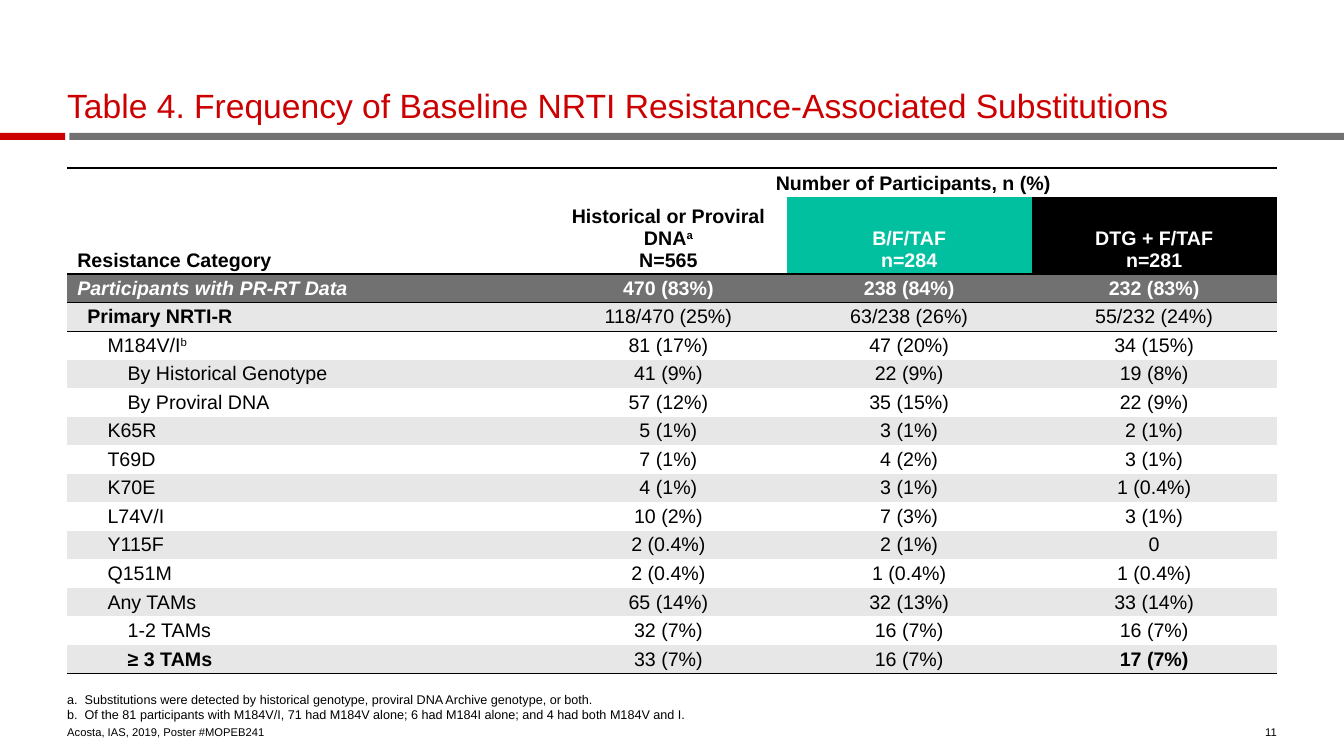
from lxml import etree
from pptx import Presentation
from pptx.dml.color import RGBColor
from pptx.enum.shapes import MSO_SHAPE
from pptx.enum.text import MSO_ANCHOR, PP_ALIGN
from pptx.oxml.ns import qn
from pptx.util import Pt

RECTANGLE = MSO_SHAPE.RECTANGLE
BOTTOM, MIDDLE = MSO_ANCHOR.BOTTOM, MSO_ANCHOR.MIDDLE
LEFT, CENTER, RIGHT = PP_ALIGN.LEFT, PP_ALIGN.CENTER, PP_ALIGN.RIGHT

FONT = "Arial"
RED, GRAY, PALE, TEAL = "CC0000", "717171", "E7E7E7", "00C0A0"
BLACK, WHITE = "000000", "FFFFFF"

MARGIN, CONTENT_WIDTH = 48, 864
COLUMN_WIDTHS = (345, 169, 175, 175)
ROW_HEIGHT, GROUP_ROW_HEIGHT = 20.4, 55.4
RULED_EDGES = {0, 2, 3, 4, 16}  # row boundaries that carry a black rule

# "^" starts a superscript
GROUPS = (
    ("Historical or Proviral DNA^a\nN=565", WHITE, BLACK, 7.2),
    ("B/F/TAF\nn=284", TEAL, WHITE, 10.8),
    ("DTG + F/TAF\nn=281", BLACK, WHITE, 10.8),
)
# Left inset, category, counts
RESISTANCE_ROWS = (
    (7.2, "Participants with PR-RT Data", "470 (83%)", "238 (84%)", "232 (83%)"),
    (14.4, "Primary NRTI-R", "118/470 (25%)", "63/238 (26%)", "55/232 (24%)"),
    (28.8, "M184V/I^b", "81 (17%)", "47 (20%)", "34 (15%)"),
    (43.2, "By Historical Genotype", "41 (9%)", "22 (9%)", "19 (8%)"),
    (43.2, "By Proviral DNA", "57 (12%)", "35 (15%)", "22 (9%)"),
    (28.8, "K65R", "5 (1%)", "3 (1%)", "2 (1%)"),
    (28.8, "T69D", "7 (1%)", "4 (2%)", "3 (1%)"),
    (28.8, "K70E", "4 (1%)", "3 (1%)", "1 (0.4%)"),
    (28.8, "L74V/I", "10 (2%)", "7 (3%)", "3 (1%)"),
    (28.8, "Y115F", "2 (0.4%)", "2 (1%)", "0"),
    (28.8, "Q151M", "2 (0.4%)", "1 (0.4%)", "1 (0.4%)"),
    (28.8, "Any TAMs", "65 (14%)", "32 (13%)", "33 (14%)"),
    (43.2, "1-2 TAMs", "32 (7%)", "16 (7%)", "16 (7%)"),
    (43.2, "≥ 3 TAMs", "33 (7%)", "16 (7%)", "17 (7%)"),
)
BOLD_LABELS = {"Participants with PR-RT Data", "Primary NRTI-R", "≥ 3 TAMs"}
FOOTNOTES = (
    "a.\tSubstitutions were detected by historical genotype, proviral DNA Archive genotype, or both.\n"
    "b.\tOf the 81 participants with M184V/I, 71 had M184V alone; "
    "6 had M184I alone; and 4 had both M184V and I."
)


def rgb(hex_color):
    return RGBColor.from_string(hex_color)


def write(frame, text, size, color=BLACK, align=LEFT, bold=False, italic=False):
    """Fill a text frame, one paragraph a line."""
    for index, line in enumerate(text.split("\n")):
        paragraph = frame.paragraphs[0] if index == 0 else frame.add_paragraph()
        paragraph.alignment = align
        font = paragraph.font
        font.name, font.size, font.bold, font.italic = FONT, Pt(size), bold, italic
        font.color.rgb = rgb(color)
        body, _, superscript = line.partition("^")
        paragraph.add_run().text = body
        if superscript:
            raised = paragraph.add_run()
            raised.text = superscript
            raised.font._element.set("baseline", "30000")


def clear_insets(frame):
    frame.margin_left = frame.margin_right = frame.margin_top = frame.margin_bottom = 0
    frame.vertical_anchor = BOTTOM
    frame.word_wrap = True


def add_bar(slide, left, width, color):
    bar = slide.shapes.add_shape(RECTANGLE, Pt(left), Pt(95), Pt(width), Pt(5))
    bar.shadow.inherit = False
    bar.fill.solid()
    bar.fill.fore_color.rgb = rgb(color)
    bar.line.fill.background()


def add_note(slide, left, top, width, height, text, size, align=LEFT):
    note = slide.shapes.add_textbox(Pt(left), Pt(top), Pt(width), Pt(height))
    clear_insets(note.text_frame)
    write(note.text_frame, text, size, align=align)
    return note.text_frame


def set_borders(cell, has_top, has_bottom):
    properties = cell._tc.get_or_add_tcPr()
    for tag, visible in (("lnL", False), ("lnR", False), ("lnT", has_top), ("lnB", has_bottom)):
        border = etree.SubElement(properties, qn(f"a:{tag}"), w=str(Pt(1)))
        if visible:
            fill = etree.SubElement(border, qn("a:solidFill"))
            etree.SubElement(fill, qn("a:srgbClr"), val=BLACK)
        else:
            etree.SubElement(border, qn("a:noFill"))


def style_cell(cell, fill, left, right, anchor):
    cell.fill.solid()
    cell.fill.fore_color.rgb = rgb(fill)
    cell.margin_left, cell.margin_right = Pt(left), Pt(right)
    cell.margin_top = cell.margin_bottom = Pt(1.44)
    cell.vertical_anchor = anchor


def add_header(table):
    category, participants = table.cell(0, 0), table.cell(0, 1)
    category.merge(table.cell(1, 0))
    participants.merge(table.cell(0, 3))
    for cell, text, align in (
        (category, "Resistance Category", LEFT),
        (participants, "Number of Participants, n (%)", CENTER),
    ):
        write(cell.text_frame, text, 14, align=align, bold=True)
    for row in range(2):
        for column in range(4):
            style_cell(table.cell(row, column), WHITE, 7.2, 7.2, BOTTOM)
    for column, (text, fill, color, inset) in enumerate(GROUPS, 1):
        cell = table.cell(1, column)
        style_cell(cell, fill, inset, inset, BOTTOM)
        write(cell.text_frame, text, 14, color, CENTER, bold=True)


def add_counts(table):
    for row, (indent, category, *counts) in enumerate(RESISTANCE_ROWS, 2):
        is_total = row == 2
        fill = GRAY if is_total else PALE if row % 2 else WHITE
        color = WHITE if is_total else BLACK
        label = table.cell(row, 0)
        style_cell(label, fill, indent, 7.2, MIDDLE)
        write(label.text_frame, category, 14, color,
              bold=category in BOLD_LABELS, italic=is_total)
        for column, count in enumerate(counts, 1):
            cell = table.cell(row, column)
            style_cell(cell, fill, 0.72, 0.72, MIDDLE)
            write(cell.text_frame, count, 14, color, CENTER,
                  bold=is_total or count == "17 (7%)")


def add_resistance_table(slide):
    row_count = len(RESISTANCE_ROWS) + 2
    height = GROUP_ROW_HEIGHT + (row_count - 1) * ROW_HEIGHT
    table = slide.shapes.add_table(
        row_count, 4, Pt(MARGIN), Pt(120), Pt(CONTENT_WIDTH), Pt(height)).table
    table.first_row = table.horz_banding = False
    for column, width in zip(table.columns, COLUMN_WIDTHS):
        column.width = Pt(width)
    for index, row in enumerate(table.rows):
        row.height = Pt(GROUP_ROW_HEIGHT if index == 1 else ROW_HEIGHT)
    for row in range(row_count):
        for column in range(4):
            # The category heading spans both header rows
            bottom_edge = 2 if row == column == 0 else row + 1
            set_borders(table.cell(row, column), row in RULED_EDGES, bottom_edge in RULED_EDGES)
    add_header(table)
    add_counts(table)


def main():
    presentation = Presentation()
    presentation.slide_width, presentation.slide_height = Pt(960), Pt(540)
    slide = presentation.slides.add_slide(presentation.slide_layouts[5])

    # Title and its two-colour rule
    add_bar(slide, 49.5, 910.5, GRAY)
    add_bar(slide, 0, 46.5, RED)
    title = slide.shapes.title
    title.left, title.top, title.width, title.height = Pt(MARGIN), Pt(36.7), Pt(CONTENT_WIDTH), Pt(53.3)
    clear_insets(title.text_frame)
    write(title.text_frame,
          "Table 4. Frequency of Baseline NRTI Resistance-Associated Substitutions", 24, RED)
    title.text_frame.paragraphs[0].line_spacing = 0.9

    add_resistance_table(slide)

    # Footnotes with a hanging indent, source and page number
    footnotes = add_note(slide, MARGIN, 494, 747, 22, FOOTNOTES, 9)
    for paragraph in footnotes.paragraphs:
        properties = paragraph._p.get_or_add_pPr()
        properties.set("marL", str(Pt(12.5)))
        properties.set("indent", str(-Pt(12.5)))
    add_note(slide, MARGIN, 515, 320, 13, "Acosta, IAS, 2019, Poster #MOPEB241", 8)
    add_note(slide, 886, 515, 26, 13, "11", 8, RIGHT)

    presentation.save("out.pptx")


if __name__ == "__main__":
    main()
